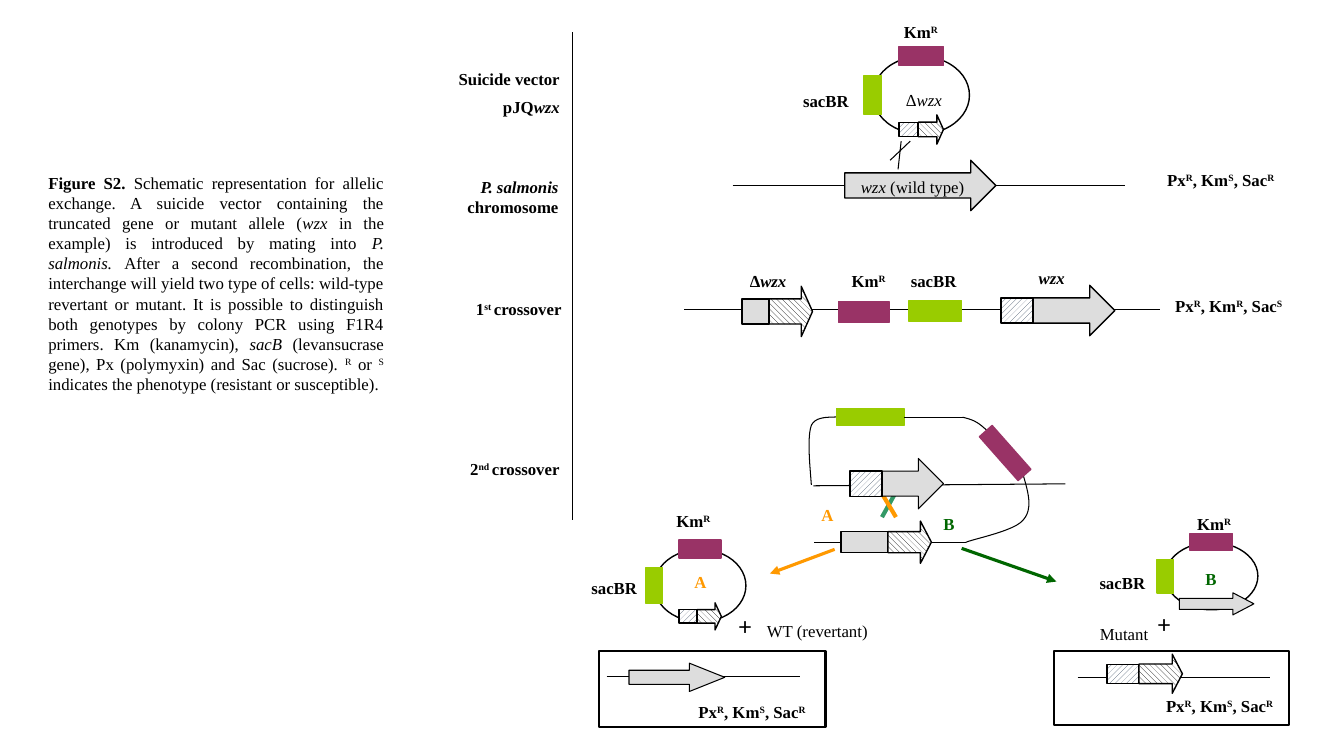
from lxml.etree import SubElement
from pptx import Presentation
from pptx.dml.color import RGBColor
from pptx.enum.dml import MSO_PATTERN_TYPE as PATTERN
from pptx.enum.shapes import MSO_CONNECTOR as CONN, MSO_SHAPE as SHAPE
from pptx.enum.text import MSO_AUTO_SIZE as AUTO, PP_ALIGN as ALIGN
from pptx.oxml.ns import qn
from pptx.util import Pt

COLORS = {
    "black": "000000", "white": "FFFFFF", "gene": "DDDDDD", "slate": "44546A",
    "km": "993366", "sac": "99CC00", "a": "FF9900", "b": "006600", "cross": "339966",
}
HATCHES = {
    "up": (PATTERN.WIDE_UPWARD_DIAGONAL, "slate"),
    "down": (PATTERN.WIDE_DOWNWARD_DIAGONAL, "black"),
}
MARKS = {"*": "bold", "_": "italic", "^": "sup"}
REVERTANT = "Px^R^, Km^S^, Sac^R^"
CAPTION = (
    "*Figure S2. *Schematic representation for allelic exchange. A suicide vector "
    "containing the truncated gene or mutant allele (_wzx_ in the example) is introduced "
    "by mating into _P. salmonis. _After a second recombination, the interchange will "
    "yield two type of cells: wild-type revertant or mutant. It is possible to distinguish "
    "both genotypes by colony PCR using F1R4 primers. Km (kanamycin), _sacB_ (levansucrase "
    "gene), Px (polymyxin) and Sac (sucrose). ^R^ or ^S^ indicates the phenotype "
    "(resistant or susceptible)."
)


def rgb(name):
    return RGBColor.from_string(COLORS[name])


def add_runs(p, text, size, font, color, bold):
    state = {"bold": bold, "italic": False, "sup": False}
    chunk = ""
    for ch in text + "\0":
        if ch not in MARKS and ch != "\0":
            chunk += ch
            continue
        if chunk:
            r = p.add_run()
            r.text = chunk
            r.font.size, r.font.name = Pt(size), font
            r.font.bold, r.font.italic = state["bold"], state["italic"]
            r.font.color.rgb = rgb(color)
            if state["sup"]:
                r.font._element.set("baseline", "30000")
            chunk = ""
        if ch in MARKS:
            state[MARKS[ch]] = not state[MARKS[ch]]


def add_text(s, text, x, y, w, h=21.6, *, size=12, font="Times New Roman",
             color="black", bold=True, align=ALIGN.LEFT):
    sp = s.shapes.add_textbox(Pt(x), Pt(y), Pt(w), Pt(h))
    tf = sp.text_frame
    tf.word_wrap = True
    tf.auto_size = AUTO.SHAPE_TO_FIT_TEXT
    for i, line in enumerate(text.split("\n")):
        p = tf.add_paragraph() if i else tf.paragraphs[0]
        p.alignment = align
        p.space_before = Pt(6 if i else 0)
        add_runs(p, line, size, font, color, bold)


def style(sp, fill, line, width):
    sp.shadow.inherit = False
    if fill is None:
        sp.fill.background()
    elif fill in HATCHES:
        sp.fill.patterned()
        sp.fill.pattern, fore = HATCHES[fill]
        sp.fill.fore_color.rgb = rgb(fore)
        sp.fill.back_color.rgb = rgb("white")
    else:
        sp.fill.solid()
        sp.fill.fore_color.rgb = rgb(fill)
    sp.line.color.rgb = rgb(line)
    sp.line.width = Pt(width)


def add_box(s, x, y, w, h, fill=None, line="black", width=1, kind=SHAPE.RECTANGLE):
    sp = s.shapes.add_shape(kind, Pt(x), Pt(y), Pt(w), Pt(h))
    style(sp, fill, line, width)
    return sp


def add_gene(s, x, cy, w, h, fill="gene", head=0.5, width=1):
    sp = add_box(s, x, cy - h / 2, w, h, fill, width=width, kind=SHAPE.RIGHT_ARROW)
    sp.adjustments[1] = head


def add_marker(s, name, x, y, w, h):
    return add_box(s, x, y, w, h, name, name)


def add_line(s, x1, y1, x2, y2, color="black", width=0.75, arrow=False):
    c = s.shapes.add_connector(CONN.STRAIGHT, Pt(x1), Pt(y1), Pt(x2), Pt(y2))
    c.line.color.rgb = rgb(color)
    c.line.width = Pt(width)
    if arrow:
        SubElement(c.line._get_or_add_ln(), qn("a:tailEnd"), type="triangle")
    SubElement(c._element.spPr, qn("a:effectLst"))
    return c


def add_curve(s, start, *beziers, steps=12):
    points, p0 = [], start
    for p1, p2, p3 in beziers:
        for i in range(1, steps + 1):
            t = i / steps
            u = 1 - t
            points.append(tuple(
                Pt(u**3 * a + 3 * u * u * t * b + 3 * u * t * t * c + t**3 * d)
                for a, b, c, d in zip(p0, p1, p2, p3)))
        p0 = p3
    fb = s.shapes.build_freeform(Pt(start[0]), Pt(start[1]))
    fb.add_line_segments(points, close=False)
    style(fb.convert_to_shape(), None, "black", 0.75)


def add_truncated(s, x, cy, box_w, box_h, arrow_w, arrow_h, fill="up"):
    add_box(s, x, cy - box_h / 2, box_w, box_h, fill)
    add_gene(s, x + box_w, cy, arrow_w, arrow_h, "down", 0.26)


def add_plasmid(s, x, y, w, h, km_label, sac_label):
    add_box(s, x, y, w, h, kind=SHAPE.OVAL)
    add_marker(s, "km", x + 0.27 * w, y - 0.13 * h, 0.46 * w, 0.25 * h)
    add_marker(s, "sac", x - 0.09 * w, y + 0.25 * h, 0.18 * w, 0.5 * h)
    add_text(s, "Km^R^", *km_label, 44)
    add_text(s, "sacBR", *sac_label, 50)


def draw_stage_labels(s):
    add_text(s, CAPTION, 27.4, 119.5, 254, 181.4, bold=False, align=ALIGN.JUSTIFY)
    add_line(s, 409, 23, 409, 371.5)
    for text, x, y, w, h in (
        ("Suicide vector\npJQ_wzx_", 311, 45.4, 96, 44),
        ("_P. salmonis _chromosome", 286.6, 122.4, 119.5, 36),
        ("1^st ^crossover", 306.7, 210.2, 101.5, 21.6),
        ("2^nd ^crossover", 305.3, 324, 101.5, 21.6),
    ):
        add_text(s, text, x, y, w, h, align=ALIGN.RIGHT)


def draw_vector(s):
    add_plasmid(s, 623.5, 40.3, 69, 55.4, (638.5, 12.2), (566.6, 61.2))
    add_truncated(s, 642.2, 92.5, 13.7, 10.1, 18, 20.9)
    add_text(s, "Δ_wzx_", 640, 60.5, 47.5, bold=False)
    add_line(s, 523.4, 132.5, 803.5, 132.5)
    add_gene(s, 603.4, 132.5, 108, 36)
    add_line(s, 643.7, 100.8, 641.5, 121)
    add_line(s, 650.2, 100.8, 635.8, 114.5)
    add_text(s, "_wzx _(wild type)", 606.2, 123, 91.4, bold=False, align=ALIGN.CENTER)
    add_text(s, REVERTANT, 826.6, 117.4, 106)


def draw_first_crossover(s):
    add_line(s, 488.9, 221, 828.7, 221)
    add_truncated(s, 530, 222.5, 19.4, 18, 31, 36, "gene")
    add_marker(s, "km", 599, 215.3, 36, 15.1)
    add_marker(s, "sac", 649.4, 214.6, 37.4, 15.1)
    add_gene(s, 729.4, 221.8, 67, 36)
    add_box(s, 715, 212.8, 23, 18, "up")
    add_text(s, "Δ_wzx_", 528.5, 190, 67)
    add_text(s, "Km^R^", 601.2, 190, 44)
    add_text(s, "sacBR", 643.5, 190, 50)
    add_text(s, "_wzx_", 717.8, 188, 67, align=ALIGN.CENTER)
    add_text(s, "Px^R^, Km^R^, Sac^S^", 832.3, 208, 106)


def draw_second_crossover(s):
    add_line(s, 581, 347, 761, 345.6)
    add_curve(s, (730.8, 339.1), ((734.4, 351.4), (738, 363.6), (730.8, 371.5)),
              ((724.3, 379.4), (697, 384.5), (689.8, 387.4)))
    add_curve(s, (579.6, 346.3), ((578.2, 329), (576.7, 311.8), (579.6, 303.8)),
              ((583.2, 295.9), (596.9, 298.8), (600.5, 297.4)))
    add_curve(s, (687.6, 298), ((690.5, 298.8), (694, 299.5), (697.7, 301.7)),
              ((701.3, 303.8), (704.9, 307.4), (708.5, 311)))
    sac = add_marker(s, "sac", 597.6, 292, 48.2, 12)
    add_line(s, 645.8, 298, 687.6, 298).begin_connect(sac, 3)
    add_marker(s, "km", 697, 317.5, 41.8, 12.2).rotation = 48.5
    add_line(s, 689.8, 387.4, 581.8, 387.4)
    add_line(s, 630, 369.4, 640, 351.4, "cross", 3)
    add_line(s, 640, 369.4, 629.3, 351.4, "a", 3)
    add_gene(s, 607, 345.5, 67, 36, width=0.75)
    add_box(s, 607, 336.5, 23, 18, "up")
    add_truncated(s, 600.8, 387.3, 33.5, 15.1, 31, 30.2, "gene")
    add_text(s, "A", 579.6, 357.1, 23.8, color="a")
    add_text(s, "B", 666.7, 363.6, 23.8, color="b")
    add_line(s, 596.2, 392.4, 550, 409.7, "a", 2.25, arrow=True)
    add_line(s, 686.9, 391.7, 754.6, 415.4, "b", 2.25, arrow=True)


def draw_revertant(s):
    add_plasmid(s, 467.3, 392.4, 65.5, 51.8, (476, 361), (415.4, 409))
    add_truncated(s, 485, 440.3, 13, 9.4, 17.3, 19.4)
    add_text(s, "A", 489, 404.6, 23.8, color="a")
    add_text(s, "+", 520.6, 432.7, 24, 28.8, size=18, font="Calibri", bold=False)
    add_text(s, "WT (revertant)", 540.7, 440, 118, bold=False)
    add_box(s, 427.7, 465.1, 162, 54, width=1.5)
    add_line(s, 433.4, 483.1, 571.7, 483.1)
    add_gene(s, 449.3, 483.8, 68.4, 20.2, head=1.25, width=0.75)
    add_text(s, REVERTANT, 491.8, 497.5, 106)


def draw_mutant(s):
    add_plasmid(s, 832.3, 387.4, 66.2, 48.2, (848, 363.6), (778.3, 405.4))
    add_gene(s, 842.4, 431.3, 53.3, 15.8, head=0.95, width=0.75)
    add_text(s, "B", 854, 402.5, 43.2, color="b")
    add_text(s, "+", 820, 431.3, 24, 28.8, size=18, font="Calibri", bold=False)
    add_text(s, "Mutant", 736.6, 442, 90.7, bold=False, align=ALIGN.RIGHT)
    add_box(s, 753.1, 465.1, 167.8, 52.6, width=1.5)
    add_line(s, 769.7, 483.8, 907.2, 483.8)
    add_truncated(s, 790.6, 481.3, 23, 13.7, 31, 28)
    add_text(s, REVERTANT, 825.8, 493.2, 106)


def main():
    prs = Presentation()
    prs.slide_width, prs.slide_height = Pt(960), Pt(540)
    s = prs.slides.add_slide(prs.slide_layouts[6])
    for draw in (draw_stage_labels, draw_vector, draw_first_crossover,
                 draw_second_crossover, draw_revertant, draw_mutant):
        draw(s)
    prs.save("out.pptx")


if __name__ == "__main__":
    main()
